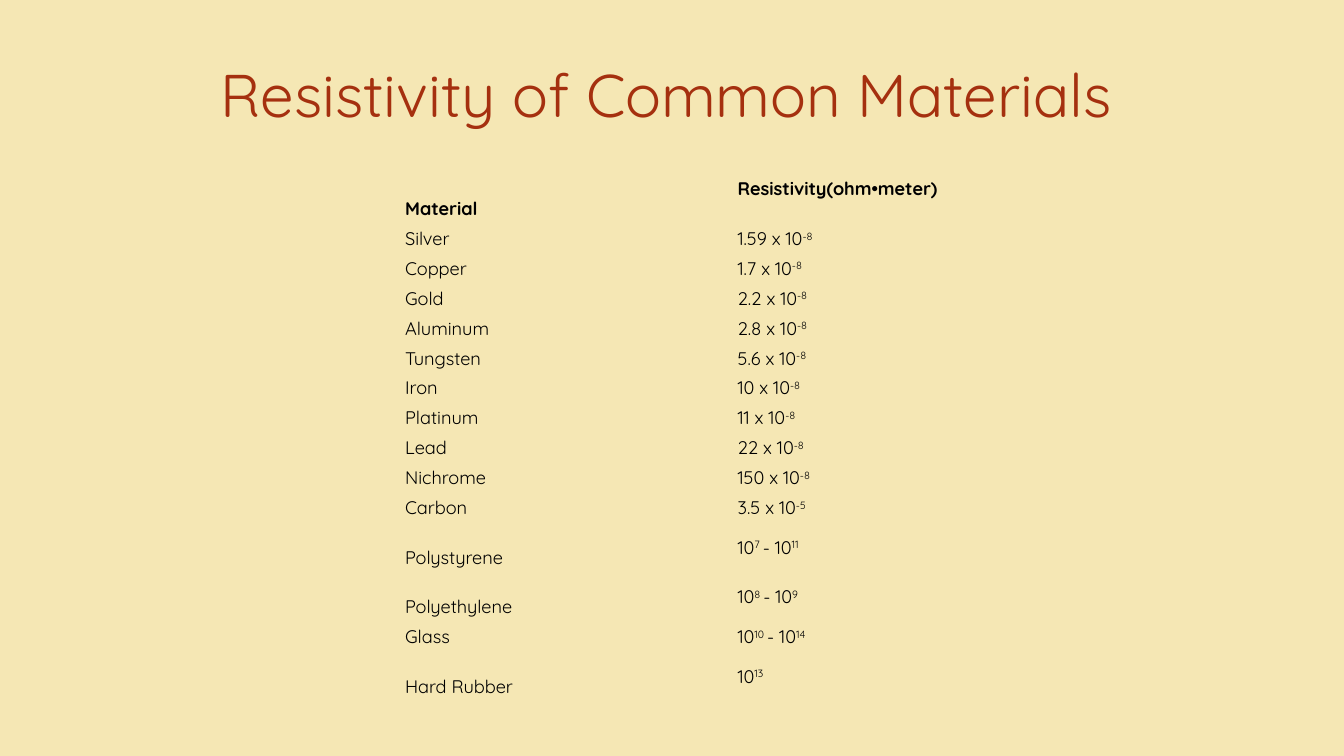
from dataclasses import dataclass

from pptx import Presentation
from pptx import util as u
from pptx.dml import color
from pptx.enum import text


@dataclass(frozen=True)
class Theme:
    """Colours, font and type sizes of the slide."""
    background: color.RGBColor = color.RGBColor.from_string("F5E7B4")
    heading: color.RGBColor = color.RGBColor.from_string("A5300F")
    body: color.RGBColor = color.RGBColor.from_string("000000")
    font: str = "Quicksand"
    heading_size: int = 43
    body_size: int = 13
    plain_table: str = "{2D5ABB26-0587-4C30-8999-92F81FD0307C}"


THEME = Theme()
HEADER_HEIGHT, ROW_HEIGHT, TALL_HEIGHT = 1.78, 0.72, 1.25
TALL_MATERIALS = {"Polystyrene", "Polyethylene", "Hard Rubber"}
HEADER = ("Material", "Resistivity(ohm•meter)")
RESISTIVITIES = [
    ("Silver", "1.59 x 10|-8"),
    ("Copper", "1.7 x 10|-8"),
    ("Gold", "2.2 x 10|-8"),
    ("Aluminum", "2.8 x 10|-8"),
    ("Tungsten", "5.6 x 10|-8"),
    ("Iron", "10 x 10|-8"),
    ("Platinum", "11 x 10|-8"),
    ("Lead", "22 x 10|-8"),
    ("Nichrome", "150 x 10|-8"),
    ("Carbon", "3.5 x 10|-5"),
    ("Polystyrene", "10|7 |- 10|11"),
    ("Polyethylene", "10|8 |- 10|9"),
    ("Glass", "10|10 |- 10|14"),
    ("Hard Rubber", "10|13"),
]


def style_font(font, size, rgb, bold=False):
    """Apply the slide's typeface with a size, colour and weight."""
    font.name = THEME.font
    font.size = u.Pt(size)
    font.color.rgb = rgb
    font.bold = bold


def place_title(slide, left, top, width, height):
    """Move and format the title placeholder."""
    title = slide.shapes.title
    title.left, title.top = u.Cm(left), u.Cm(top)
    title.width, title.height = u.Cm(width), u.Cm(height)
    frame = title.text_frame
    frame.text = "Resistivity of Common Materials"
    frame.word_wrap = True
    frame.auto_size = text.MSO_AUTO_SIZE.NONE
    frame.vertical_anchor = text.MSO_ANCHOR.MIDDLE
    heading = frame.paragraphs[0]
    heading.alignment = text.PP_ALIGN.LEFT
    style_font(heading.runs[0].font, THEME.heading_size, THEME.heading)


def fill_cell(cell, content, anchor, bold):
    """Write a cell; every second part between bars is an exponent."""
    cell.fill.background()
    cell.vertical_anchor = anchor
    cell.margin_left = cell.margin_right = u.Cm(0.18)
    cell.margin_top = cell.margin_bottom = u.Cm(0.09)
    paragraph = cell.text_frame.paragraphs[0]
    paragraph.alignment = text.PP_ALIGN.LEFT
    for index, part in enumerate(content.split("|")):
        run = paragraph.add_run()
        run.text = part
        style_font(run.font, THEME.body_size, THEME.body, bold)
        if index % 2:
            run.font._element.set("baseline", "30000")


def row_height(material):
    """Return the height in centimetres of a material's row."""
    if material == HEADER[0]:
        return HEADER_HEIGHT
    return TALL_HEIGHT if material in TALL_MATERIALS else ROW_HEIGHT


def place_resistivity_table(slide, left, top, width):
    """Place the two-column table of materials and resistivities."""
    entries = [HEADER, *RESISTIVITIES]
    heights = [row_height(material) for material, _ in entries]
    table = slide.shapes.add_table(
        len(entries), len(HEADER), u.Cm(left), u.Cm(top),
        u.Cm(width), u.Cm(sum(heights))).table
    table.first_row = table.horz_banding = False
    table._tbl.tblPr[0].text = THEME.plain_table
    material_width = 8.38
    table.columns[0].width = u.Cm(material_width)
    table.columns[1].width = u.Cm(width - material_width)
    anchors = (text.MSO_ANCHOR.BOTTOM, text.MSO_ANCHOR.MIDDLE)
    for row, entry, height in zip(table.rows, entries, heights):
        row.height = u.Cm(height)
        for cell, content, anchor in zip(row.cells, entry, anchors):
            fill_cell(cell, content, anchor, entry is HEADER)


def main():
    """Build and save the resistivity slide."""
    deck = Presentation()
    deck.slide_width, deck.slide_height = u.Cm(33.87), u.Cm(19.05)
    slide = deck.slides.add_slide(deck.slide_layouts[5])
    slide.background.fill.solid()
    slide.background.fill.fore_color.rgb = THEME.background
    place_resistivity_table(slide, 10.03, 3.86, 17.25)
    place_title(slide, 5.31, 0.76, 27.76, 3.18)
    deck.save("out.pptx")


if __name__ == "__main__":
    main()
